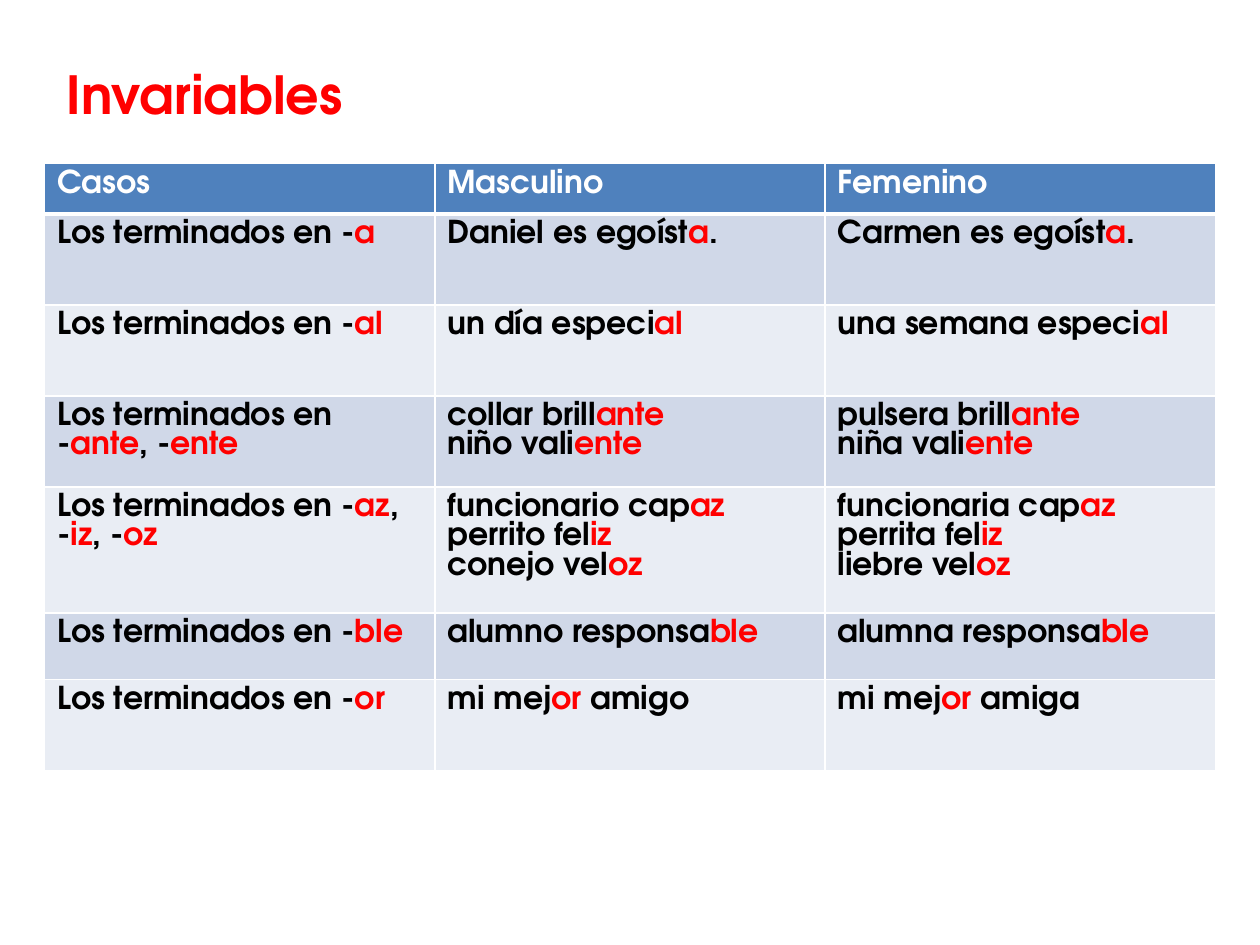
from lxml import etree
from pptx import Presentation
from pptx.dml.color import RGBColor
from pptx.enum.lang import MSO_LANGUAGE_ID
from pptx.oxml.ns import qn
from pptx.util import Pt

SPANISH = MSO_LANGUAGE_ID.SPANISH
FONT = "TeX Gyre Adventor"
RED, BLACK, WHITE = "FF0000", "000000", "FFFFFF"
HEADER_FILL = "4F81BD"
BAND_FILLS = ["D0D8E8", "E9EDF4"]
COLUMN_WIDTH = 223
ROW_HEIGHTS = [28.5, 52, 52, 52, 72, 38, 52]
ROWS = [
    ["Casos", "Masculino", "Femenino"],
    ["Los terminados en -*a*", "Daniel es egoíst*a*.", "Carmen es egoíst*a*."],
    ["Los terminados en -*al*", "un día especi*al*", "una semana especi*al*"],
    ["Los terminados en -*ante*, -*ente*",
     "collar brill*ante*\nniño vali*ente*",
     "pulsera brill*ante*\nniña vali*ente*"],
    ["Los terminados en -*az*, -*iz*, -*oz*",
     "funcionario cap*az*\nperrito fel*iz*\nconejo vel*oz*",
     "funcionaria cap*az*\nperrita fel*iz*\nliebre vel*oz*"],
    ["Los terminados en -*ble*", "alumno responsa*ble*", "alumna responsa*ble*"],
    ["Los terminados en -*or*", "mi mej*or* amigo", "mi mej*or* amiga"],
]


def color(value):
    """Turn a hex string into a colour."""
    return RGBColor.from_string(value)


def write(frame, text, size=18, ink=BLACK, accent=RED):
    """Write lines of text, with the parts between asterisks in the accent colour."""
    for index, line in enumerate(text.split("\n")):
        para = frame.add_paragraph() if index else frame.paragraphs[0]
        for part, words in enumerate(line.split("*")):
            if words:
                span = para.add_run()
                span.text = words
                span.font.name = FONT
                span.font.size = Pt(size)
                span.font.bold = True
                span.font.language_id = SPANISH
                span.font.color.rgb = color(accent if part % 2 else ink)


class SlideBuilder:
    """Hold the current slide and draw its elements in one style."""

    def __init__(self, page):
        """Keep the page to draw on."""
        self.page = page

    def title(self, text, left, top, width, height):
        """Add the heading."""
        box = self.page.shapes.add_textbox(Pt(left), Pt(top), Pt(width), Pt(height))
        box.text_frame.word_wrap = True
        write(box.text_frame, text, size=30, ink=RED)

    def borders(self, cell, bottom):
        """Draw white lines around a cell."""
        properties = cell._tc.get_or_add_tcPr()
        widths = {"a:lnL": 1, "a:lnR": 1, "a:lnT": 1, "a:lnB": bottom}
        for position, (tag, width) in enumerate(widths.items()):
            line = etree.Element(qn(tag), w=str(Pt(width)))
            fill = etree.SubElement(line, qn("a:solidFill"))
            etree.SubElement(fill, qn("a:srgbClr"), val=WHITE)
            properties.insert(position, line)

    def table(self, rows, left, top, column_width, heights):
        """Add a table with a header and alternating row fills."""
        columns = len(rows[0])
        table = self.page.shapes.add_table(
            len(rows), columns, Pt(left), Pt(top),
            Pt(column_width * columns), Pt(sum(heights))).table
        for column in table.columns:
            column.width = Pt(column_width)
        for number, (texts, height) in enumerate(zip(rows, heights)):
            header = number == 0
            table.rows[number].height = Pt(height)
            for cell, text in zip(table.rows[number].cells, texts):
                cell.fill.solid()
                cell.fill.fore_color.rgb = color(
                    HEADER_FILL if header else BAND_FILLS[(number - 1) % 2])
                self.borders(cell, bottom=3 if header else 1)
                write(cell.text_frame, text, ink=WHITE if header else BLACK)


def main():
    """Build the slide and save it."""
    deck = Presentation()
    deck.slide_width, deck.slide_height = Pt(720), Pt(540)
    builder = SlideBuilder(deck.slides.add_slide(deck.slide_layouts[6]))
    builder.title("Invariables", 31, 32, 187, 44)
    builder.table(ROWS, 25.5, 93.5, COLUMN_WIDTH, ROW_HEIGHTS)
    deck.save("out.pptx")


if __name__ == "__main__":
    main()
